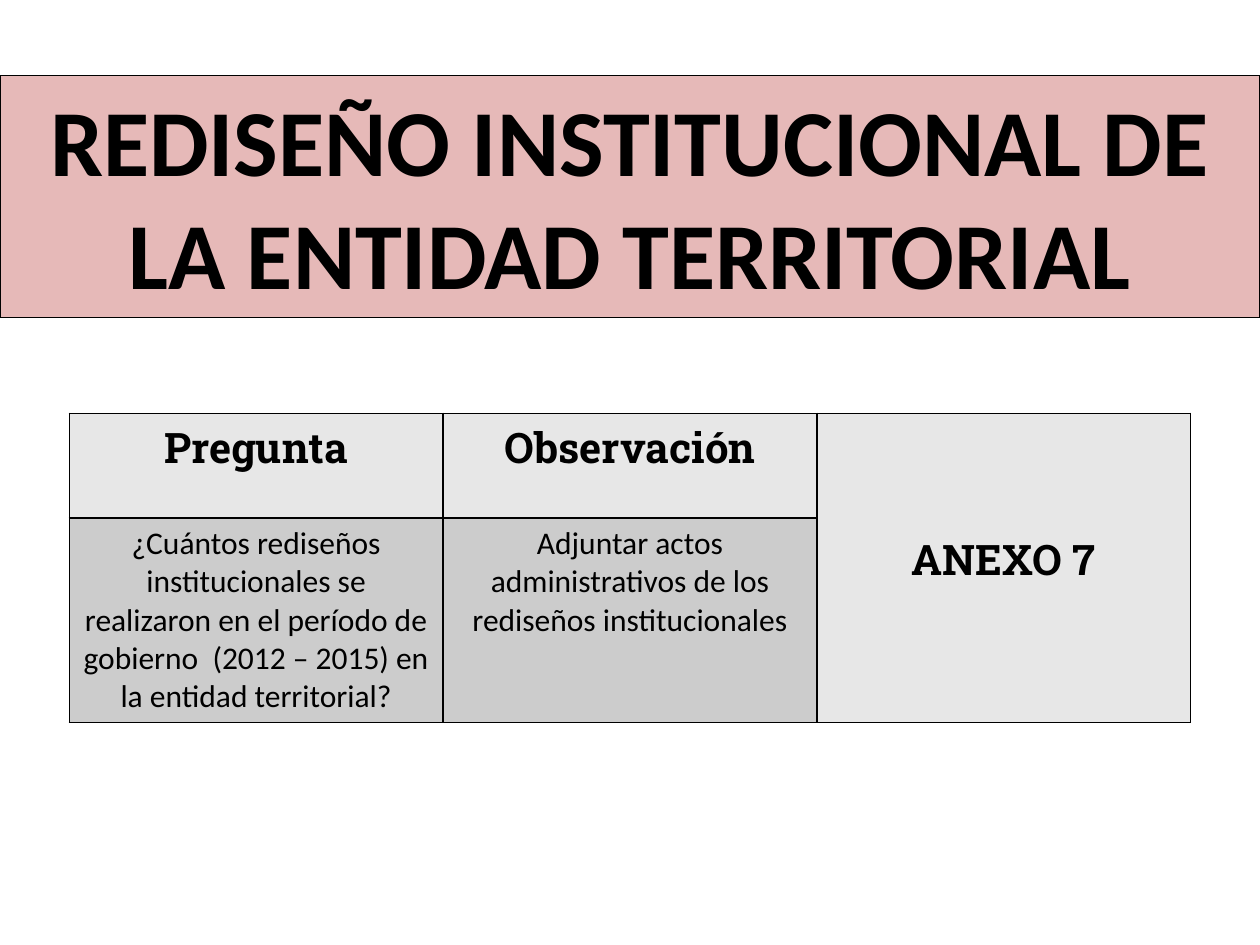
from lxml.etree import SubElement
from pptx import Presentation
from pptx.dml.color import RGBColor
from pptx.enum.shapes import MSO_SHAPE as Shape
from pptx.enum.text import MSO_ANCHOR as Anchor, PP_ALIGN as Align
from pptx.oxml.ns import qn
from pptx.util import Inches, Pt

TITLE = "REDISEÑO INSTITUCIONAL DE LA ENTIDAD TERRITORIAL"
HEADERS = ["Pregunta", "Observación", "ANEXO 7"]
ANSWERS = [
    "¿Cuántos rediseños institucionales se realizaron en el período de gobierno  (2012 – 2015) en la entidad territorial?",
    "Adjuntar actos administrativos de los rediseños institucionales",
]
ROW_HEIGHTS = [0.83, 1.62]
TABLE_WIDTH = 8.9
COLORS = {"ink": "000000", "banner": "E6B9B8", "header": "E7E7E7", "answer": "CCCCCC"}


def color(name):
    return RGBColor.from_string(COLORS[name])


def write(frame, text, size, font="Calibri", bold=False):
    para = frame.paragraphs[0]
    para.alignment = Align.CENTER
    span = para.add_run()
    span.text = text
    span.font.size = Pt(size)
    span.font.name = font
    span.font.bold = bold
    span.font.color.rgb = color("ink")


def paint(cell, fill):
    """Give a cell black borders on all sides and a solid fill."""
    props = cell._tc.get_or_add_tcPr()
    for side in ("lnL", "lnR", "lnT", "lnB"):
        line = SubElement(props, qn(f"a:{side}"), w=str(Pt(1)))
        solid = SubElement(line, qn("a:solidFill"))
        SubElement(solid, qn("a:srgbClr"), val=COLORS["ink"])
    cell.fill.solid()
    cell.fill.fore_color.rgb = color(fill)


def add_questions(page):
    table = page.shapes.add_table(
        len(ROW_HEIGHTS), len(HEADERS), Inches(0.55), Inches(3.28),
        Inches(TABLE_WIDTH), Inches(sum(ROW_HEIGHTS))).table
    for row, height in zip(table.rows, ROW_HEIGHTS):
        row.height = Inches(height)
    for column in table.columns:
        column.width = Inches(TABLE_WIDTH / len(HEADERS))

    annex = table.cell(0, 2)
    annex.merge(table.cell(1, 2))
    for index, text in enumerate(HEADERS):
        write(table.cell(0, index).text_frame, text, 24, font="Roboto Slab", bold=True)
        paint(table.cell(0, index), "header")
    for index, text in enumerate(ANSWERS):
        write(table.cell(1, index).text_frame, text, 18)
        paint(table.cell(1, index), "answer")
    paint(table.cell(1, 2), "header")
    annex.vertical_anchor = Anchor.MIDDLE
    annex.margin_bottom = Inches(0.19)


def add_banner(page):
    banner = page.shapes.add_shape(
        Shape.RECTANGLE, 0, Inches(0.6), Inches(10), Inches(1.92))
    banner.shadow.inherit = False
    banner.fill.solid()
    banner.fill.fore_color.rgb = color("banner")
    banner.line.color.rgb = color("ink")
    banner.line.width = Pt(0.75)
    frame = banner.text_frame
    frame.word_wrap = True
    frame.vertical_anchor = Anchor.TOP
    write(frame, TITLE, 54, bold=True)


def main():
    deck = Presentation()
    deck.slide_width, deck.slide_height = Inches(10), Inches(7.5)
    page = deck.slides.add_slide(deck.slide_layouts[6])
    add_questions(page)
    add_banner(page)
    deck.save("out.pptx")


if __name__ == "__main__":
    main()
